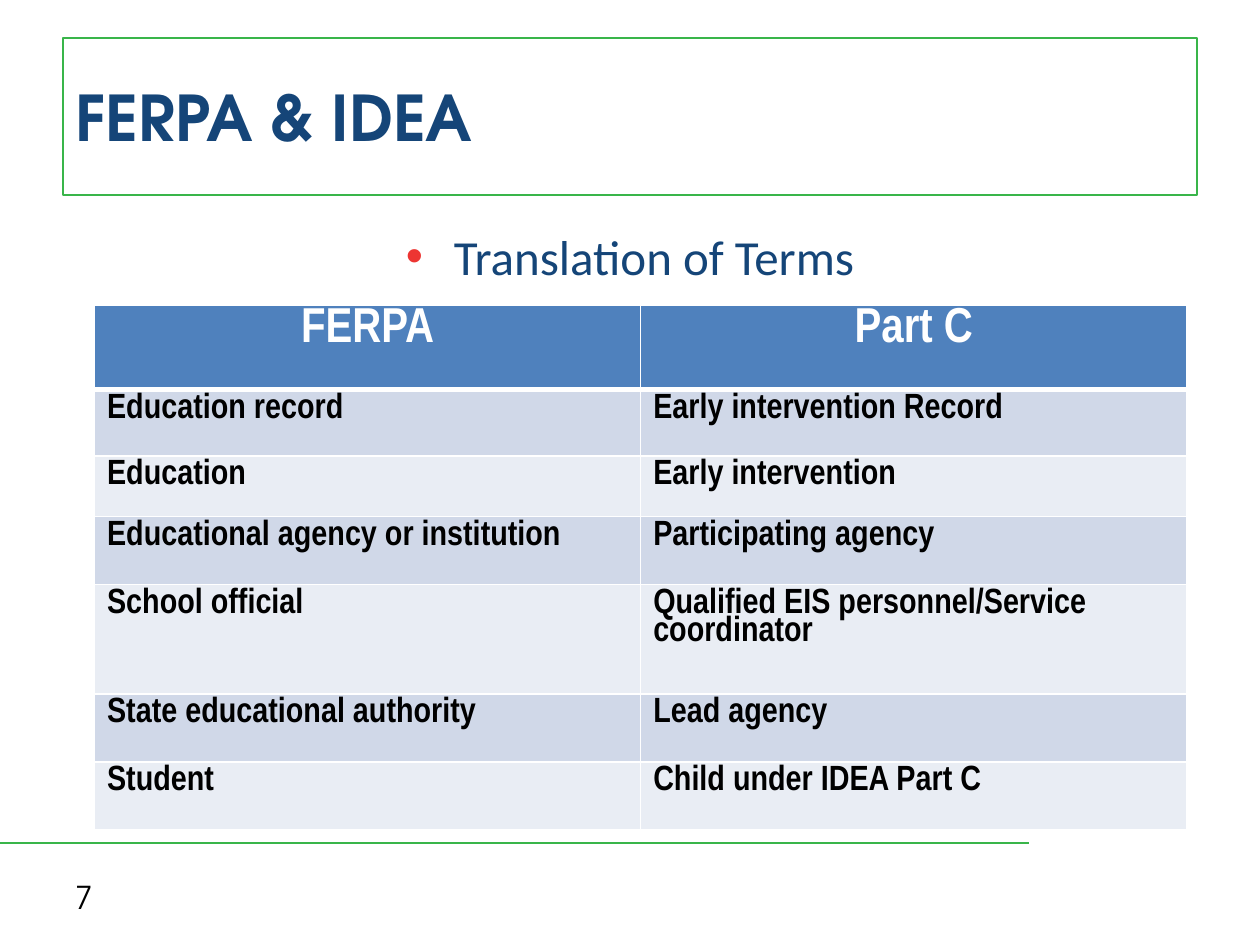
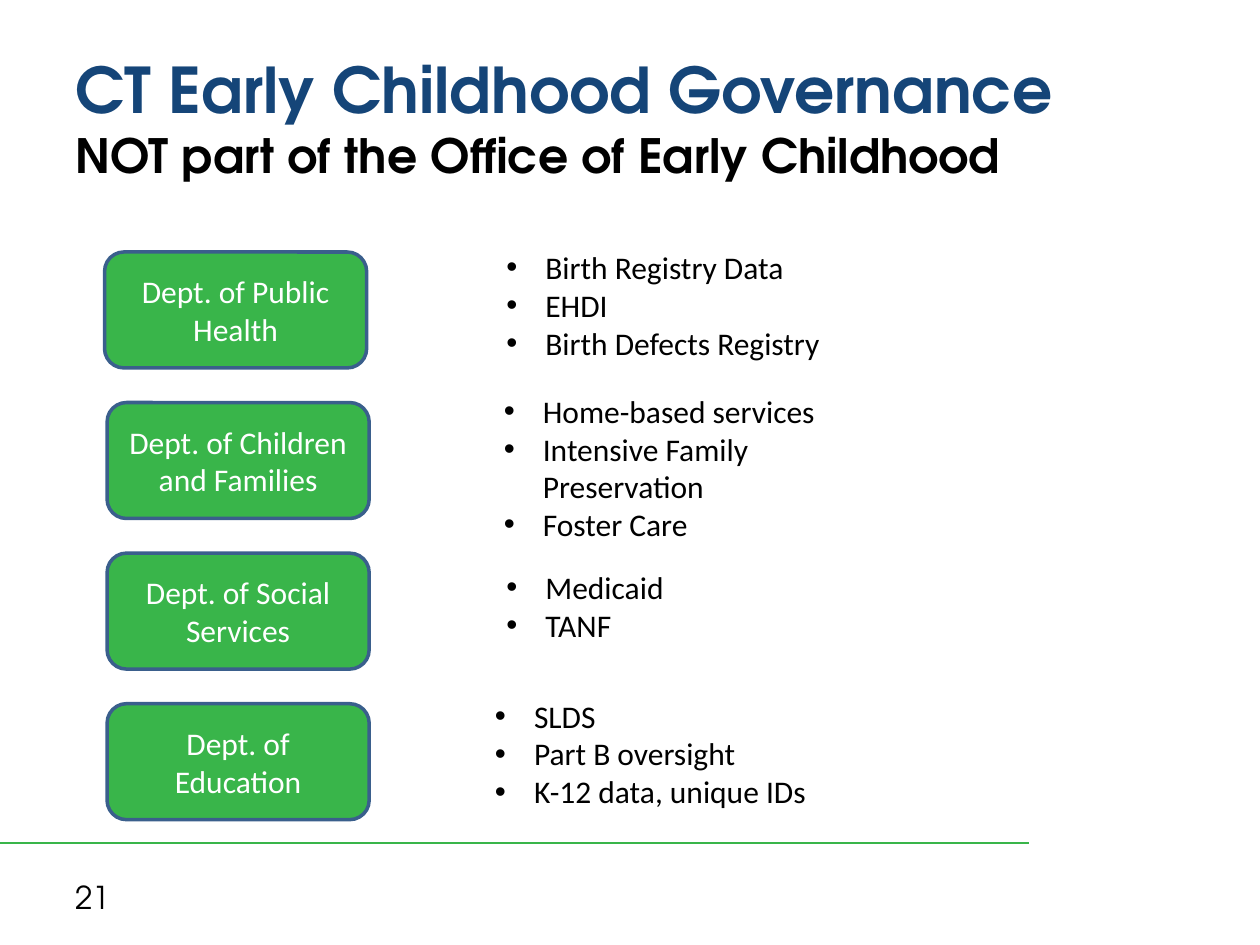
"""Builds two slides on early childhood data terms and governance."""
from lxml import etree
from pptx import Presentation
from pptx.dml.color import RGBColor
from pptx.enum.shapes import MSO_CONNECTOR, MSO_SHAPE
from pptx.enum.text import MSO_ANCHOR, PP_ALIGN
from pptx.oxml import parse_xml
from pptx.oxml.ns import nsdecls, qn
from pptx.util import Inches, Pt

LEFT, CENTER = PP_ALIGN.LEFT, PP_ALIGN.CENTER
TOP, MIDDLE = MSO_ANCHOR.TOP, MSO_ANCHOR.MIDDLE
STRAIGHT = MSO_CONNECTOR.STRAIGHT
RECTANGLE, ROUNDED = MSO_SHAPE.RECTANGLE, MSO_SHAPE.ROUNDED_RECTANGLE

THEME = {
    "green": "39B54A", "outline": "3A5F8C", "white": "FFFFFF", "red": "ED3532",
    "header": "4F81BD", "bands": ("D0D8E8", "E9EDF4"),
    "title": {"name": "TeX Gyre Adventor", "size": Pt(36), "bold": True, "color": "154578"},
    "subtitle": {"name": "TeX Gyre Adventor", "size": Pt(27), "bold": True, "color": "000000"},
    "number": {"name": "TeX Gyre Adventor", "size": Pt(18), "color": "000000"},
    "lead": {"name": "Calibri", "size": Pt(28), "color": "154578"},
    "department": {"name": "Calibri", "size": Pt(18), "color": "FFFFFF"},
    "program": {"name": "Calibri", "size": Pt(18), "color": "000000"},
    "table_header": {"name": "Arial Narrow", "size": Pt(28), "bold": True, "color": "FFFFFF"},
    "table_body": {"name": "Arial Narrow", "size": Pt(20), "bold": True, "color": "000000"},
}


def add_run(paragraph, text, style):
    run = paragraph.add_run()
    run.text = text
    for attribute, value in THEME[style].items():
        if attribute == "color":
            run.font.color.rgb = RGBColor.from_string(value)
        else:
            setattr(run.font, attribute, value)


def add_bullet(paragraph, indent, color):
    properties = paragraph._p.get_or_add_pPr()
    properties.set("marL", str(Inches(indent)))
    properties.set("indent", str(-Inches(indent)))
    for xml in (f'<a:buClr {nsdecls("a")}><a:srgbClr val="{color}"/></a:buClr>',
                f'<a:buFont {nsdecls("a")} typeface="Arial"/>',
                f'<a:buChar {nsdecls("a")} char="•"/>'):
        properties.append(parse_xml(xml))


presentation = Presentation()
presentation.slide_width, presentation.slide_height = Inches(10), Inches(7.5)

headings = [
    ("7", [("FERPA & IDEA", "title")]),
    ("21", [("CT Early Childhood Governance", "title"),
            ("NOT part of the Office of Early Childhood", "subtitle")]),
]
for number, title_lines in headings:
    slide = presentation.slides.add_slide(presentation.slide_layouts[5])
    rule = slide.shapes.add_connector(STRAIGHT, 0, Inches(6.69), Inches(8.17), Inches(6.69))
    rule.line.color.rgb = RGBColor.from_string(THEME["green"])
    rule.line.width = Pt(1.5)
    etree.SubElement(rule._element.spPr, qn("a:effectLst"))

    number_box = slide.shapes.add_textbox(Inches(0.5), Inches(6.92), Inches(2.33), Inches(0.4))
    number_box.text_frame.vertical_anchor = MIDDLE
    add_run(number_box.text_frame.paragraphs[0], number, "number")

    title = slide.shapes.title
    title.left, title.top, title.width, title.height = map(Inches, (0.5, 0.3, 9, 1.25))
    title.text_frame.vertical_anchor = MIDDLE
    title_paragraph = title.text_frame.paragraphs[0]
    title_paragraph.alignment = LEFT
    for index, (text, style) in enumerate(title_lines):
        if index:
            title_paragraph.add_line_break()
        add_run(title_paragraph, text, style)

terms_slide, governance_slide = presentation.slides

title_line = terms_slide.shapes.title.line
title_line.color.rgb = RGBColor.from_string(THEME["green"])
title_line.width = Pt(1)

lead_box = terms_slide.shapes.add_textbox(Inches(0.5), Inches(1.75), Inches(9), Inches(0.6))
lead_box.text_frame.word_wrap = True
lead = lead_box.text_frame.paragraphs[0]
lead.alignment = CENTER
add_bullet(lead, 0.38, THEME["red"])
add_run(lead, "Translation of Terms", "lead")

terms = [
    (0.67, "FERPA", "Part C"),
    (0.53, "Education record", "Early intervention Record"),
    (0.48, "Education", "Early intervention"),
    (0.54, "Educational agency or institution", "Participating agency"),
    (0.87, "School official", "Qualified EIS personnel/Service coordinator"),
    (0.54, "State educational authority", "Lead agency"),
    (0.54, "Student", "Child under IDEA Part C"),
]
table = terms_slide.shapes.add_table(
    len(terms), 2, Inches(0.75), Inches(2.42), Inches(8.67), Inches(4.17)).table
table.horz_banding = False
for row_index, (height, *texts) in enumerate(terms):
    is_header = row_index == 0
    table.rows[row_index].height = Inches(height)
    for column_index, text in enumerate(texts):
        cell = table.cell(row_index, column_index)
        paragraph = cell.text_frame.paragraphs[0]
        paragraph.alignment = CENTER if is_header else LEFT
        paragraph.line_spacing = 0.85
        add_run(paragraph, text, "table_header" if is_header else "table_body")
        cell_properties = cell._tc.get_or_add_tcPr()
        for side in "LRTB":
            thick = (is_header and side == "B") or (row_index == 1 and side == "T")
            cell_properties.append(parse_xml(
                f'<a:ln{side} {nsdecls("a")} w="{Pt(3 if thick else 1)}"><a:solidFill>'
                f'<a:srgbClr val="{THEME["white"]}"/></a:solidFill></a:ln{side}>'))
        cell.fill.solid()
        fill_color = THEME["header"] if is_header else THEME["bands"][(row_index - 1) % 2]
        cell.fill.fore_color.rgb = RGBColor.from_string(fill_color)

departments = [
    ("Dept. of Public Health", 0.83, (3.92, 1.92, 1.01),
     ["Birth Registry Data", "EHDI", "Birth Defects Registry"]),
    ("Dept. of Children and Families", 0.85, (3.9, 3.06, 1.31),
     ["Home-based services", "Intensive Family Preservation", "Foster Care"]),
    ("Dept. of Social Services", 0.85, (3.92, 4.46, 0.71), ["Medicaid", "TANF"]),
    ("Dept. of Education", 0.85, (3.83, 5.48, 1.01),
     ["SLDS", "Part B oversight", "K-12 data, unique IDs"]),
]
for index, (name, left, (list_left, list_top, list_height), programs) in enumerate(departments):
    department = governance_slide.shapes.add_shape(
        ROUNDED, Inches(left), Inches(2 + index * 1.195), Inches(2.08), Inches(0.92))
    department.shadow.inherit = False
    department.fill.solid()
    department.fill.fore_color.rgb = RGBColor.from_string(THEME["green"])
    department.line.color.rgb = RGBColor.from_string(THEME["outline"])
    department.line.width = Pt(2)
    department.text_frame.vertical_anchor = MIDDLE
    department.text_frame.paragraphs[0].alignment = CENTER
    add_run(department.text_frame.paragraphs[0], name, "department")

    program_box = governance_slide.shapes.add_textbox(
        Inches(list_left), Inches(list_top), Inches(3.25), Inches(list_height))
    program_frame = program_box.text_frame
    program_frame.word_wrap = True
    for program_index, program in enumerate(programs):
        paragraph = program_frame.add_paragraph() if program_index else program_frame.paragraphs[0]
        add_bullet(paragraph, 0.31, THEME["program"]["color"])
        add_run(paragraph, program, "program")

presentation.save("out.pptx")
